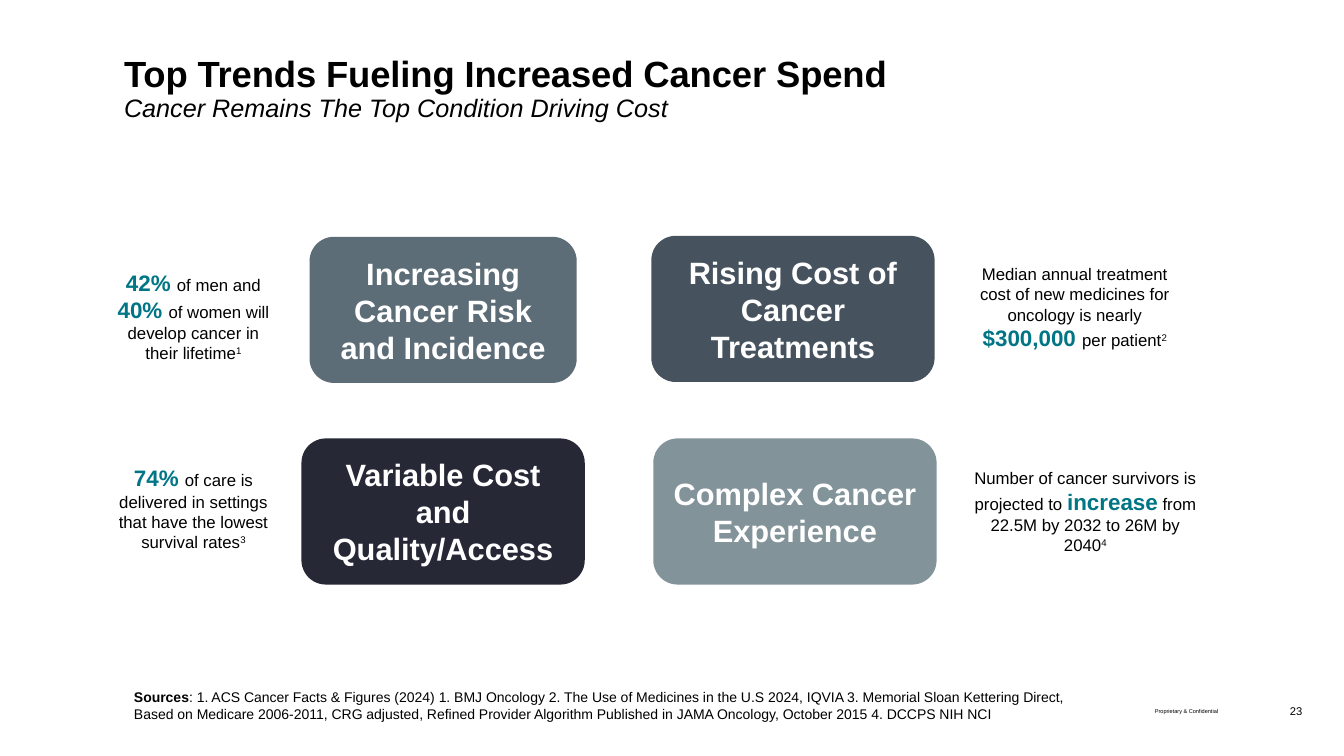
"""Build the slide on the top trends fueling increased cancer spend."""
from dataclasses import dataclass
from typing import NamedTuple

import pptx
import pptx.dml.color
import pptx.enum.shapes
import pptx.enum.text
import pptx.shapes.autoshape
import pptx.slide
import pptx.util

RGBColor = pptx.dml.color.RGBColor
Align = pptx.enum.text.PP_ALIGN
Anchor = pptx.enum.text.MSO_ANCHOR

BLACK = RGBColor(0x00, 0x00, 0x00)
WHITE = RGBColor(0xFF, 0xFF, 0xFF)
TEAL = RGBColor(0x00, 0x75, 0x85)
STEEL = RGBColor(0x5D, 0x6D, 0x78)
SLATE = RGBColor(0x46, 0x53, 0x5E)
NAVY = RGBColor(0x26, 0x28, 0x36)
MIST = RGBColor(0x82, 0x93, 0x9A)

SLIDE_WIDTH = pptx.util.Inches(13.33)
SLIDE_HEIGHT = pptx.util.Inches(7.5)
MARGIN = 9.23
CARD_HEIGHT = 19.33


class Area(NamedTuple):
    """Left, top, width and height in percent of the slide."""
    left: float
    top: float
    width: float
    height: float

    def emu(self) -> list[int]:
        sides = (SLIDE_WIDTH, SLIDE_HEIGHT, SLIDE_WIDTH, SLIDE_HEIGHT)
        return [round(side * share / 100) for side, share in zip(sides, self)]


class Span(NamedTuple):
    """A stretch of text with one format."""
    text: str
    size: float = 12
    color: RGBColor = BLACK
    bold: bool = False
    italic: bool = False
    raised: bool = False
    spacing: int = 0


@dataclass(frozen=True)
class Trend:
    """A coloured card and the fact beside it."""
    headline: str
    fill: RGBColor
    card: Area
    fact: list[Span]
    fact_area: Area


def key(text: str) -> Span:
    return Span(text, 16, TEAL, bold=True)


def note(number: str) -> Span:
    return Span(number, raised=True)


def write(shape: pptx.shapes.autoshape.Shape, spans: list[Span], *,
          align: Align = Align.LEFT, anchor: Anchor = Anchor.TOP,
          inset_x: float = 0, inset_y: float = 0, after: float = 0) -> None:
    frame = shape.text_frame
    frame.word_wrap = True
    frame.vertical_anchor = anchor
    frame.margin_left = frame.margin_right = pptx.util.Inches(inset_x)
    frame.margin_top = frame.margin_bottom = pptx.util.Inches(inset_y)
    paragraph = frame.paragraphs[0]
    paragraph.alignment = align
    paragraph.space_after = pptx.util.Pt(after)
    for span in spans:
        run = paragraph.add_run()
        run.text = span.text
        run.font.name = "Arial"
        run.font.size = pptx.util.Pt(span.size)
        run.font.color.rgb = span.color
        run.font.bold = span.bold
        run.font.italic = span.italic
        if span.raised:
            run._r.get_or_add_rPr().set("baseline", "30000")
        if span.spacing:
            run._r.get_or_add_rPr().set("spc", str(span.spacing))


def add_text(slide: pptx.slide.Slide, area: Area, spans: list[Span], **layout) -> None:
    write(slide.shapes.add_textbox(*area.emu()), spans, **layout)


def add_trend(slide: pptx.slide.Slide, trend: Trend) -> None:
    card = slide.shapes.add_shape(
        pptx.enum.shapes.MSO_SHAPE.ROUNDED_RECTANGLE, *trend.card.emu())
    card.shadow.inherit = False
    card.fill.solid()
    card.fill.fore_color.rgb = trend.fill
    card.line.fill.background()
    write(card, [Span(trend.headline, 22, WHITE, bold=True)], align=Align.CENTER,
          anchor=Anchor.MIDDLE, inset_x=0.1, inset_y=0.1, after=7)
    add_text(slide, trend.fact_area, trend.fact, align=Align.CENTER,
             inset_x=0.1, inset_y=0.05, after=7)


TRENDS = [
    Trend("Increasing Cancer Risk and Incidence", STEEL,
          Area(23.03, 31.33, 19.88, CARD_HEIGHT),
          [key("42% "), Span("of men and "), key("40% "),
           Span("of women will develop cancer in their lifetime"), note("1")],
          Area(7.5, 34.93, 13.8, 6.93)),
    Trend("Rising Cost of Cancer Treatments", SLATE,
          Area(48.46, 31.2, 21.08, CARD_HEIGHT),
          [Span("Median annual treatment cost of new medicines for oncology is nearly "),
           key("$300,000 "), Span("per patient"), note("2")],
          Area(71.72, 34.27, 16.5, 15.73)),
    Trend("Variable Cost and Quality/Access", NAVY,
          Area(22.43, 58, 21.08, CARD_HEIGHT),
          [key("74% "),
           Span("of care is delivered in settings that have the lowest survival rates"),
           note("3")],
          Area(7.5, 60.8, 13.8, 6.93)),
    Trend("Complex Cancer Experience", MIST,
          Area(48.61, 58, 21.08, CARD_HEIGHT),
          [Span("Number of cancer survivors is projected to "), key("increase"),
           Span(" from 22.5M by 2032 to 26M by 2040"), note("4")],
          Area(71.72, 61.2, 18.08, 13.47)),
]

SOURCES = (
    ": 1. ACS Cancer Facts & Figures (2024) 1. BMJ Oncology 2. The Use of Medicines "
    "in the U.S 2024, IQVIA 3. Memorial Sloan Kettering Direct, Based on Medicare "
    "2006-2011, CRG adjusted, Refined Provider Algorithm Published in JAMA Oncology, "
    "October 2015 4. DCCPS NIH NCI"
)


def main() -> None:
    deck = pptx.Presentation()
    deck.slide_width, deck.slide_height = SLIDE_WIDTH, SLIDE_HEIGHT
    slide = deck.slides.add_slide(deck.slide_layouts[6])

    add_text(slide, Area(MARGIN, 6.8, 87.7, 5.87),
             [Span("Top Trends Fueling Increased Cancer Spend", 26, bold=True, spacing=-10)])
    add_text(slide, Area(MARGIN, 12.27, 87.7, 4),
             [Span("Cancer Remains The Top Condition Driving Cost", 18, italic=True)], after=7)
    for trend in TRENDS:
        add_trend(slide, trend)
    add_text(slide, Area(MARGIN, 90.4, 73.67, 7.33),
             [Span("Sources", 10, bold=True), Span(SOURCES, 10)], inset_x=0.1, inset_y=0.05)
    add_text(slide, Area(49.29, 91.47, 41.34, 5.33),
             [Span("Proprietary & Confidential", 4)], align=Align.RIGHT, anchor=Anchor.MIDDLE)
    add_text(slide, Area(93.6, 91.33, 3.3, 5.33),
             [Span("23", 8)], align=Align.RIGHT, anchor=Anchor.MIDDLE)

    deck.save("out.pptx")


if __name__ == "__main__":
    main()
